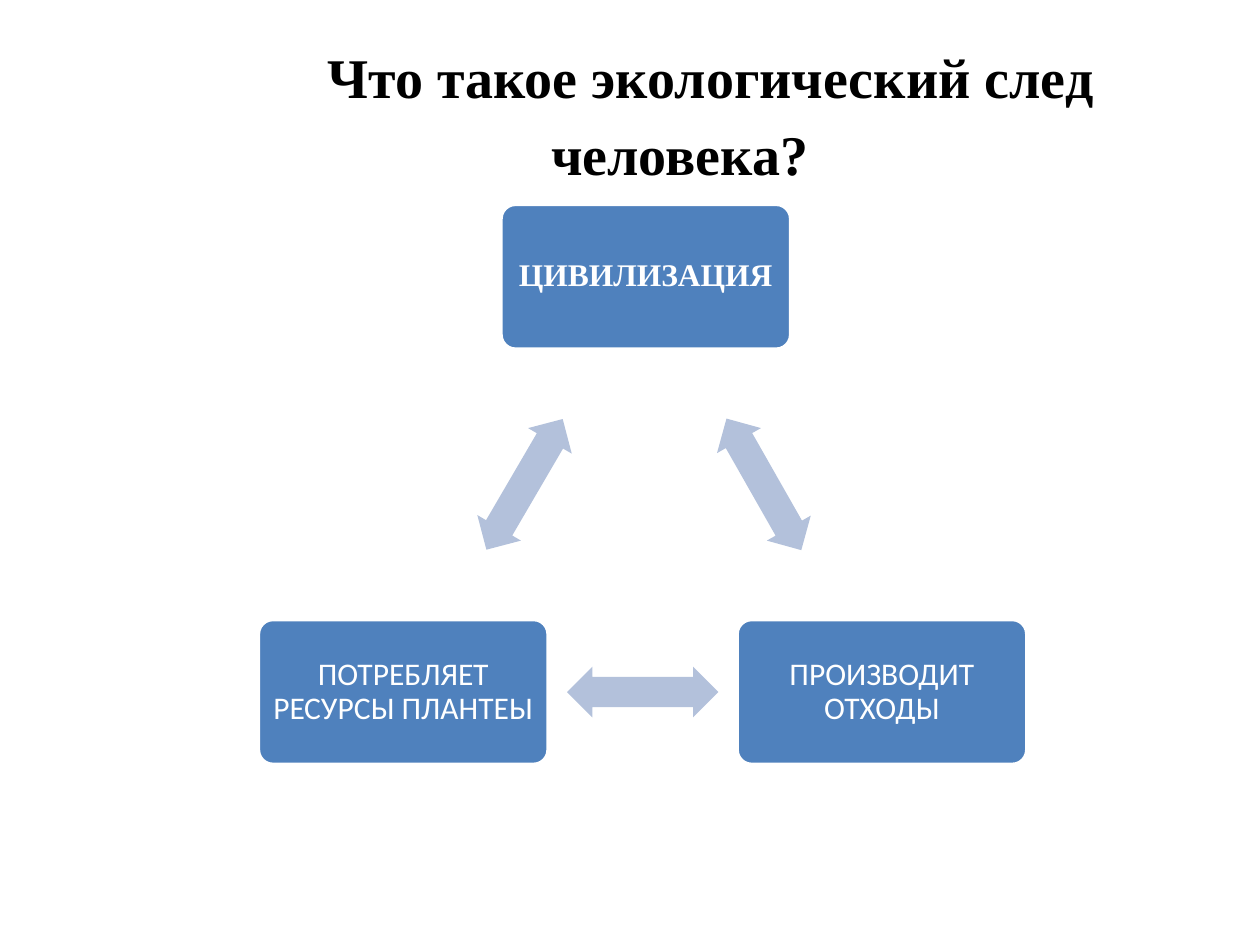
"""Build a slide showing the cycle behind the human ecological footprint."""
import itertools
import math
from dataclasses import dataclass

import pptx
import pptx.dml.color
import pptx.enum.shapes
import pptx.enum.text
import pptx.util
from pptx.util import Cm


@dataclass(frozen=True)
class Theme:
    ink: str = "000000"
    paper: str = "FFFFFF"
    stage: str = "4F81BD"
    link: str = "B3C1DB"
    title_size: int = 32
    stage_size: int = 18
    serif: str = "Times New Roman"
    sans: str = "Calibri"


def style_text(paragraph, font_name, size, color, bold):
    paragraph.alignment = pptx.enum.text.PP_ALIGN.CENTER
    for run in paragraph.runs:
        run.font.name = font_name
        run.font.size = pptx.util.Pt(size)
        run.font.bold = bold
        run.font.color.rgb = pptx.dml.color.RGBColor.from_string(color)


def add_centred(slide, kind, centre, size, color):
    left, top = (middle - length / 2 for middle, length in zip(centre, size))
    shape = slide.shapes.add_shape(kind, Cm(left), Cm(top), *map(Cm, size))
    shape.shadow.inherit = False
    shape.fill.solid()
    shape.fill.fore_color.rgb = pptx.dml.color.RGBColor.from_string(color)
    return shape


theme = Theme()
presentation = pptx.Presentation()
presentation.slide_width = Cm(25.4)
presentation.slide_height = Cm(19.05)
slide = presentation.slides.add_slide(presentation.slide_layouts[5])

title = slide.shapes.title
title.left, title.top, title.width, title.height = Cm(3.1), Cm(0.53), Cm(21.21), Cm(3.28)
title.text_frame.text = "Что такое экологический след человека?"
title.text_frame.auto_size = pptx.enum.text.MSO_AUTO_SIZE.NONE
title.text_frame.vertical_anchor = pptx.enum.text.MSO_ANCHOR.TOP
heading = title.text_frame.paragraphs[0]
heading.line_spacing = 1.15
heading._p.get_or_add_pPr().set("indent", str(Cm(1.25)))
style_text(heading, theme.serif, theme.title_size, theme.ink, True)

stages = [
    ("ЦИВИЛИЗАЦИЯ", (13.02, 5.58), theme.serif, True),
    ("ПРОИЗВОДИТ ОТХОДЫ", (17.78, 13.95), theme.sans, False),
    ("ПОТРЕБЛЯЕТ РЕСУРСЫ ПЛАНТЕЫ", (8.13, 13.95), theme.sans, False),
]
for label, centre, font_name, bold in stages:
    stage = add_centred(slide, pptx.enum.shapes.MSO_SHAPE.ROUNDED_RECTANGLE,
                        centre, (5.84, 2.92), theme.stage)
    stage.adjustments[0] = 0.1
    stage.line.color.rgb = pptx.dml.color.RGBColor.from_string(theme.paper)
    stage.line.width = pptx.util.Pt(2)
    frame = stage.text_frame
    frame.text = label
    frame.word_wrap = True
    frame.vertical_anchor = pptx.enum.text.MSO_ANCHOR.MIDDLE
    frame.margin_left = frame.margin_right = Cm(0.2)
    frame.margin_top = frame.margin_bottom = Cm(0.2)
    frame.paragraphs[0].line_spacing = 0.9
    style_text(frame.paragraphs[0], font_name, theme.stage_size, theme.paper, bold)

centres = [centre for _, centre, _, _ in stages]
for (x1, y1), (x2, y2) in itertools.pairwise(centres + centres[:1]):
    link = add_centred(slide, pptx.enum.shapes.MSO_SHAPE.LEFT_RIGHT_ARROW,
                       ((x1 + x2) / 2, (y1 + y2) / 2), (3.05, 1.02), theme.link)
    link.adjustments[0] = 0.6
    link.adjustments[1] = 0.5
    link.line.fill.background()
    link.rotation = math.degrees(math.atan2(y2 - y1, x2 - x1)) % 360

presentation.save("out.pptx")
